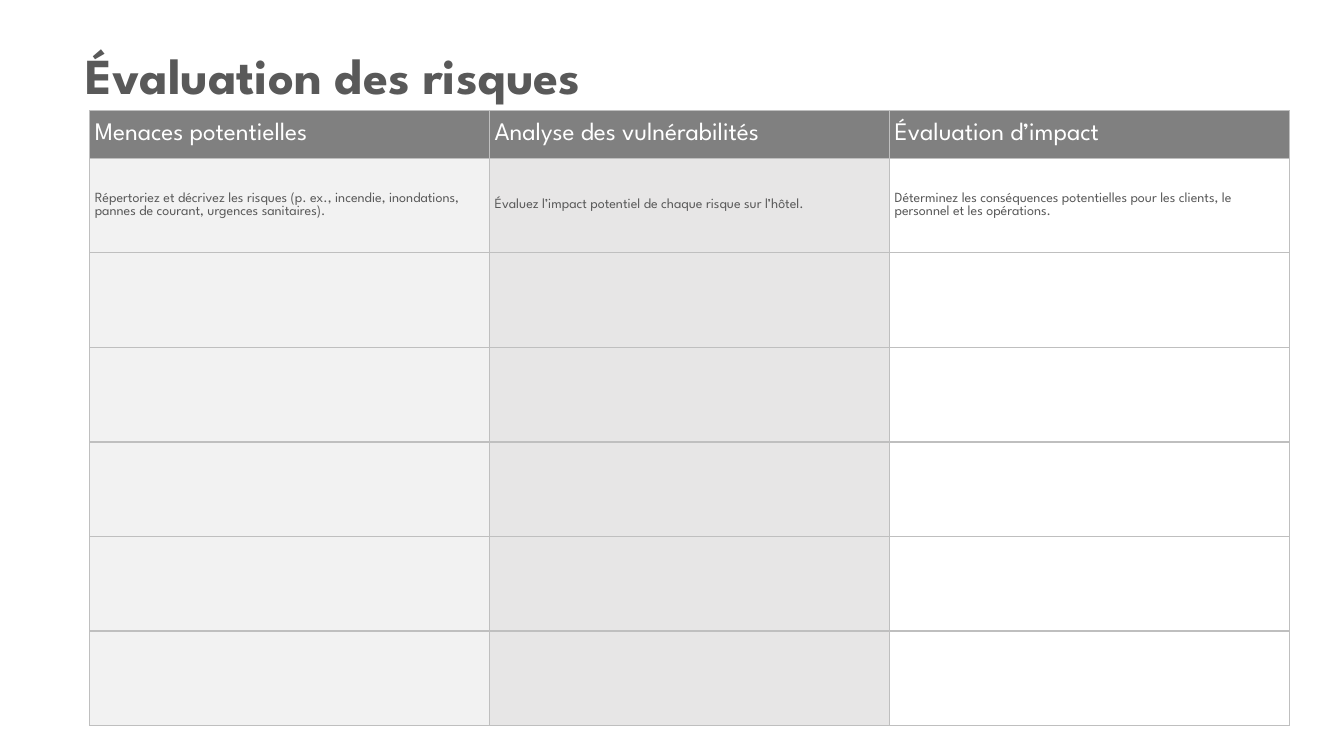
from lxml.etree import SubElement
from pptx import Presentation
from pptx.dml.color import RGBColor
from pptx.enum.text import MSO_ANCHOR
from pptx.oxml.ns import qn
from pptx.util import Inches, Pt

FONT = "League Spartan"
COLORS = {
    "text": "595959",
    "head": "808080",
    "white": "FFFFFF",
    "light": "F2F2F2",
    "mid": "E7E6E6",
    "line": "BFBFBF",
}
HEADS = ["Menaces potentielles", "Analyse des vulnérabilités", "Évaluation d’impact"]
HINTS = [
    "Répertoriez et décrivez les risques (p. ex., incendie, inondations, pannes de courant, urgences sanitaires).",
    "Évaluez l’impact potentiel de chaque risque sur l’hôtel.",
    "Déterminez les conséquences potentielles pour les clients, le personnel et les opérations.",
]
FILLS = ["light", "mid", None]
ROWS = 6


def color(name):
    return RGBColor.from_string(COLORS[name])


def style(par, size, tint, bold=False):
    font = par.font
    font.name, font.size, font.bold = FONT, Pt(size), bold
    font.color.rgb = color(tint)


def add_title(slide, left, top, width, height):
    box = slide.shapes.add_textbox(Inches(left), Inches(top), Inches(width), Inches(height))
    frame = box.text_frame
    frame.word_wrap = True
    frame.text = "Évaluation des risques"
    style(frame.paragraphs[0], 36, "text", True)


def add_edges(cell):
    props = cell._tc.get_or_add_tcPr()
    for side in ("lnL", "lnR", "lnT", "lnB"):
        line = SubElement(props, qn(f"a:{side}"), w=str(Pt(1)))
        fill = SubElement(line, qn("a:solidFill"))
        SubElement(fill, qn("a:srgbClr"), val=COLORS["line"])


def fill_cell(cell, text, size, tint, fill):
    add_edges(cell)
    if fill:
        cell.fill.solid()
        cell.fill.fore_color.rgb = color(fill)
    else:
        cell.fill.background()
    cell.vertical_anchor = MSO_ANCHOR.MIDDLE
    cell.margin_left = cell.margin_right = Inches(0.05)
    cell.margin_top = cell.margin_bottom = 0
    cell.text = text
    style(cell.text_frame.paragraphs[0], size, tint)


def add_risks(slide, left, top, width, height):
    count = len(HEADS)
    frame = slide.shapes.add_table(
        ROWS + 1, count, Inches(left), Inches(top), Inches(width), Inches(height)
    )
    table = frame.table
    table.first_row = table.horz_banding = False
    head = 0.47
    for col in table.columns:
        col.width = Inches(width / count)
    for num, row in enumerate(table.rows):
        row.height = Inches((height - head) / ROWS if num else head)
    for col, (title, hint, fill) in enumerate(zip(HEADS, HINTS, FILLS)):
        fill_cell(table.cell(0, col), title, 18, "white", "head")
        for row in range(1, ROWS + 1):
            text = hint if row == 1 else ""
            fill_cell(table.cell(row, col), text, 10, "text", fill)


def main():
    deck = Presentation()
    deck.slide_width, deck.slide_height = Inches(13.33), Inches(7.5)
    slide = deck.slides.add_slide(deck.slide_layouts[6])
    add_title(slide, 0.75, 0.39, 11, 0.71)
    add_risks(slide, 0.89, 1.1, 11.9, 6.1)
    deck.save("out.pptx")


if __name__ == "__main__":
    main()
